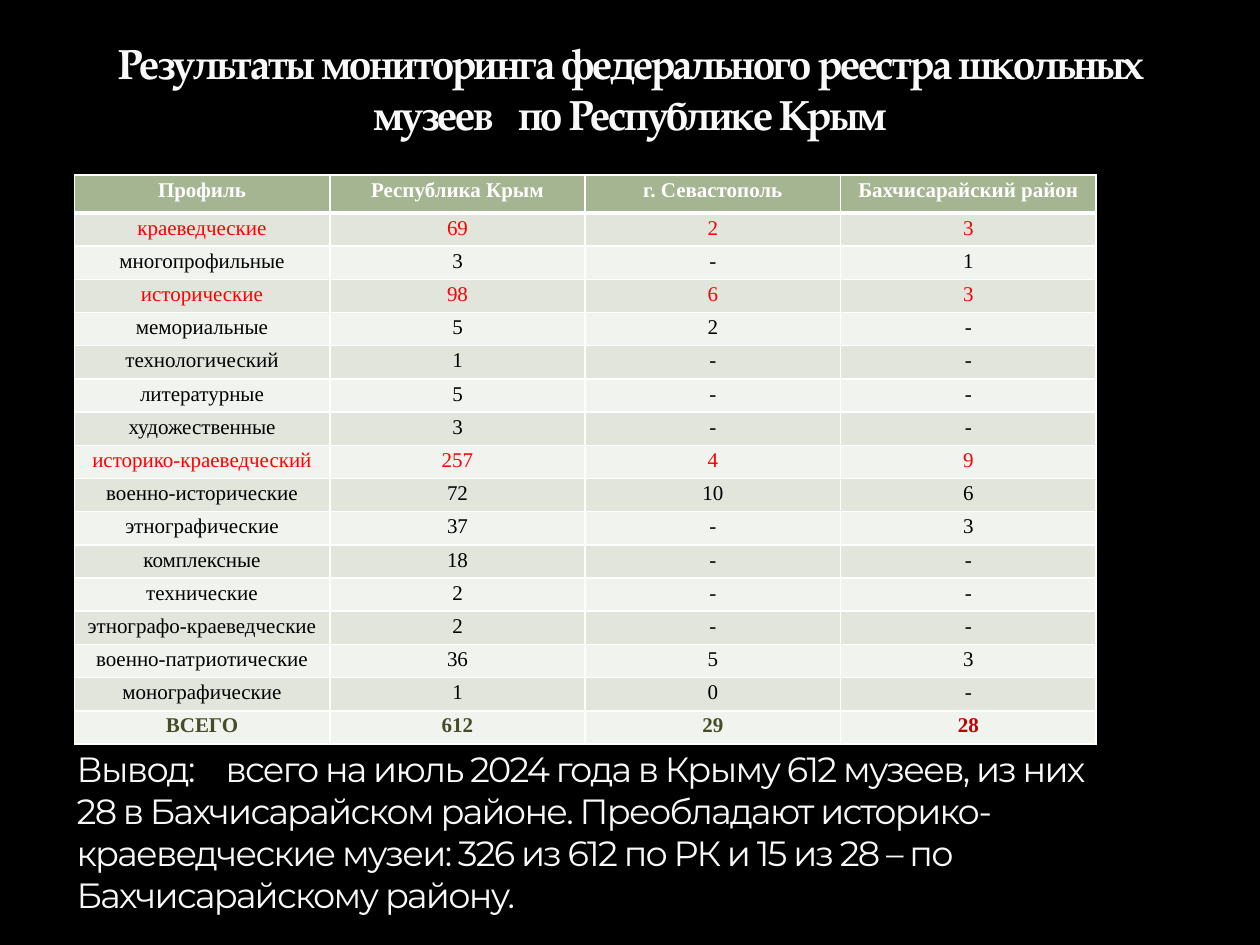
from lxml import etree
from pptx import Presentation
from pptx.dml.color import RGBColor
from pptx.enum.text import MSO_ANCHOR, MSO_AUTO_SIZE, PP_ALIGN
from pptx.oxml.ns import qn
from pptx.util import Inches, Pt

CENTER = PP_ALIGN.CENTER
LEFT = PP_ALIGN.LEFT
BOTTOM = MSO_ANCHOR.BOTTOM
TOP = MSO_ANCHOR.TOP
GROW = MSO_AUTO_SIZE.SHAPE_TO_FIT_TEXT

BLACK, WHITE, OFF_WHITE = "000000", "FFFFFF", "F9F9F9"
RED, DARK_RED, OLIVE = "FF0000", "C00000", "444D26"
HEADER_FILL, BAND_FILLS = "A5B592", ("E1E5DC", "F0F3EE")
OUTLINE = "3C4422"

TITLE_PARTS = (
    "Результаты мониторинга федерального реестра школьных музеев",
    "по Республике Крым",
)
CONCLUSION_PARTS = (
    "Вывод:",
    "всего на июль 2024 года в Крыму 612 музеев, из них 28 в Бахчисарайском "
    "районе. Преобладают историко-краеведческие музеи: 326 из 612 по РК и "
    "15 из 28 – по Бахчисарайскому району.",
)
MUSEUMS = (
    ("Профиль", "Республика Крым", "г. Севастополь", "Бахчисарайский район"),
    ("краеведческие", "69", "2", "3"),
    ("многопрофильные", "3", "-", "1"),
    ("исторические", "98", "6", "3"),
    ("мемориальные", "5", "2", "-"),
    ("технологический", "1", "-", "-"),
    ("литературные", "5", "-", "-"),
    ("художественные", "3", "-", "-"),
    ("историко-краеведческий", "257", "4", "9"),
    ("военно-исторические", "72", "10", "6"),
    ("этнографические", "37", "-", "3"),
    ("комплексные", "18", "-", "-"),
    ("технические", "2", "-", "-"),
    ("этнографо-краеведческие", "2", "-", "-"),
    ("военно-патриотические", "36", "5", "3"),
    ("монографические", "1", "0", "-"),
    ("ВСЕГО", "612", "29", "28"),
)
HIGHLIGHTED = {"краеведческие", "исторические", "историко-краеведческий"}


def rgb(value):
    return RGBColor.from_string(value)


def add_run(paragraph, text, font_name, size, color, bold=False):
    run = paragraph.add_run()
    run.text = text
    font = run.font
    font.name, font.size, font.bold = font_name, Pt(size), bold
    font.color.rgb = rgb(color)
    return run


def add_line(parent, tag, index, color, width, alpha=None):
    line = etree.Element(qn(tag), w=str(Pt(width)))
    fill = etree.SubElement(line, qn("a:solidFill"))
    paint = etree.SubElement(fill, qn("a:srgbClr"), val=color)
    if alpha is not None:
        etree.SubElement(paint, qn("a:alpha"), val=str(alpha * 1000))
    parent.insert(index, line)


def add_spaced_parts(paragraph, parts, gap, font_name, size, bold):
    """Two tightly tracked parts joined by one widened space."""
    first, second = parts
    for text, tracking in ((first, -1), (" ", gap), (second, -1)):
        run = add_run(paragraph, text, font_name, size, OFF_WHITE, bold)
        properties = run.font._element
        properties.set("spc", str(tracking * 100))
        add_line(properties, "a:ln", 0, OUTLINE, 0.25, alpha=25)


def place_title(slide, left, top, width, height):
    title = slide.shapes.title
    title.left, title.top, title.width, title.height = left, top, width, height
    frame = title.text_frame
    frame.word_wrap = True
    frame.vertical_anchor = BOTTOM
    paragraph = frame.paragraphs[0]
    paragraph.alignment = CENTER
    add_spaced_parts(paragraph, TITLE_PARTS, 9, "TeX Gyre Pagella", 24, True)


def cell_color(row, column):
    profile = MUSEUMS[row][0]
    if row == 0:
        return WHITE
    if row == len(MUSEUMS) - 1:
        return DARK_RED if column == 3 else OLIVE
    return RED if profile in HIGHLIGHTED else BLACK


def format_cell(cell, row, column):
    cell.margin_left = cell.margin_right = Inches(0.07)
    cell.margin_top = cell.margin_bottom = 0
    cell.vertical_anchor = TOP
    cell.fill.solid()
    cell.fill.fore_color.rgb = rgb(BAND_FILLS[(row - 1) % 2] if row else HEADER_FILL)

    # White grid, with a heavier rule under the header
    widths = {"a:lnL": 1, "a:lnR": 1,
              "a:lnT": 3 if row == 1 else 1, "a:lnB": 3 if row == 0 else 1}
    properties = cell._tc.get_or_add_tcPr()
    for index, (tag, width) in enumerate(widths.items()):
        add_line(properties, tag, index, WHITE, width)

    paragraph = cell.text_frame.paragraphs[0]
    paragraph.alignment = CENTER
    paragraph.line_spacing = 1.15
    add_run(paragraph, MUSEUMS[row][column], "Times New Roman", 12,
            cell_color(row, column), bold=row in (0, len(MUSEUMS) - 1))


def place_museum_table(slide, left, top, width, height):
    row_count, column_count = len(MUSEUMS), len(MUSEUMS[0])
    table = slide.shapes.add_table(
        row_count, column_count, left, top, width, height).table
    for column in table.columns:
        column.width = width // column_count
    header_height = Inches(0.3)
    for index, row in enumerate(table.rows):
        row.height = (height - header_height) // (row_count - 1) if index else header_height
        for column, cell in enumerate(row.cells):
            format_cell(cell, index, column)


def place_conclusion(slide, left, top, width, height):
    frame = slide.shapes.add_textbox(left, top, width, height).text_frame
    frame.word_wrap = True
    frame.auto_size = GROW
    paragraph = frame.paragraphs[0]
    paragraph.alignment = LEFT
    add_spaced_parts(paragraph, CONCLUSION_PARTS, 12, "Montserrat", 20, False)


def main():
    deck = Presentation()
    deck.slide_width, deck.slide_height = Inches(10), Inches(7.5)
    slide = deck.slides.add_slide(deck.slide_layouts[5])
    slide.background.fill.solid()
    slide.background.fill.fore_color.rgb = rgb(BLACK)

    place_title(slide, Inches(0.5), Inches(0.17), Inches(9), Inches(0.98))
    place_museum_table(slide, Inches(0.59), Inches(1.39), Inches(8.11), Inches(4.52))
    place_conclusion(slide, Inches(0.51), Inches(5.88), Inches(8.5), Inches(1.45))
    deck.save("out.pptx")


if __name__ == "__main__":
    main()
